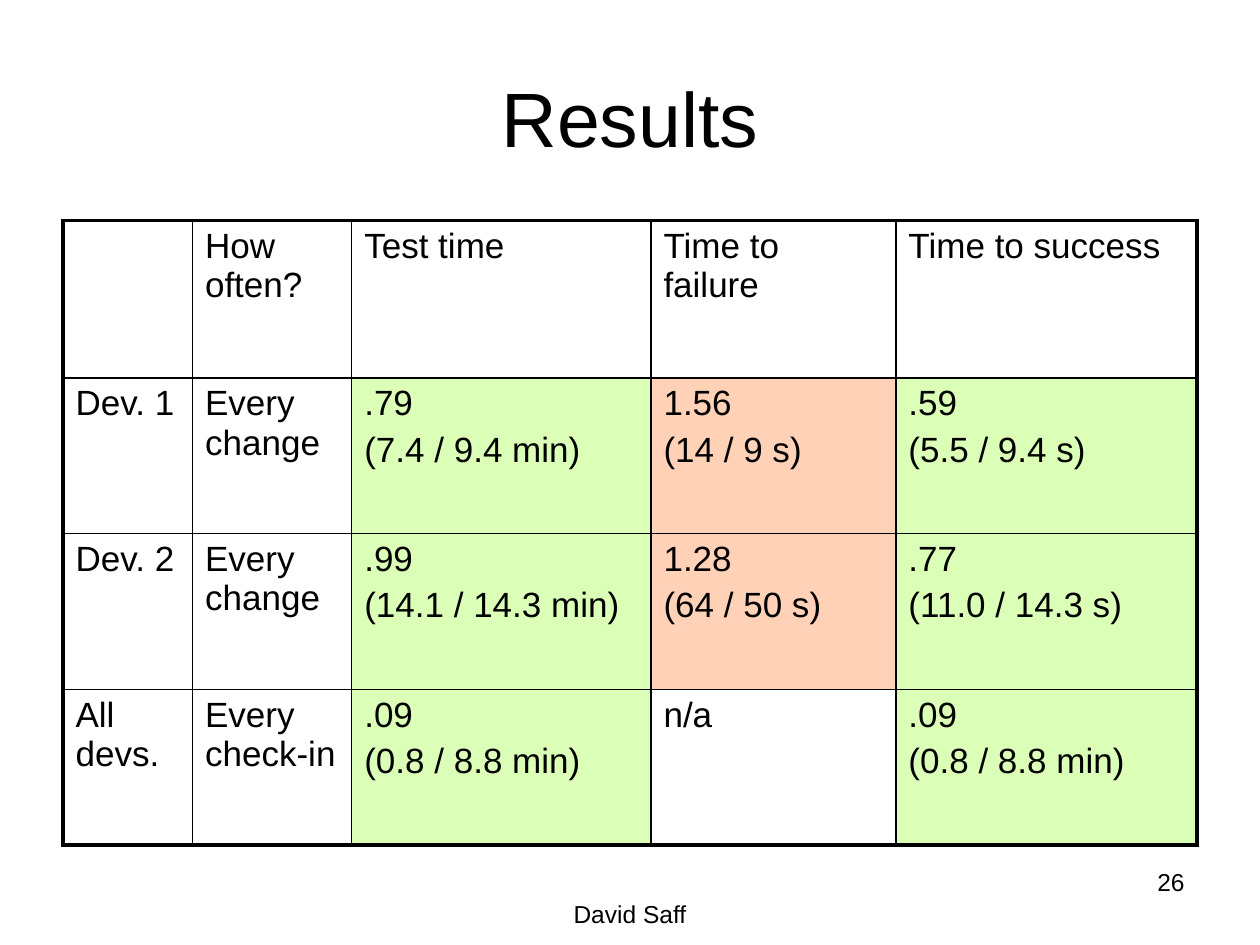
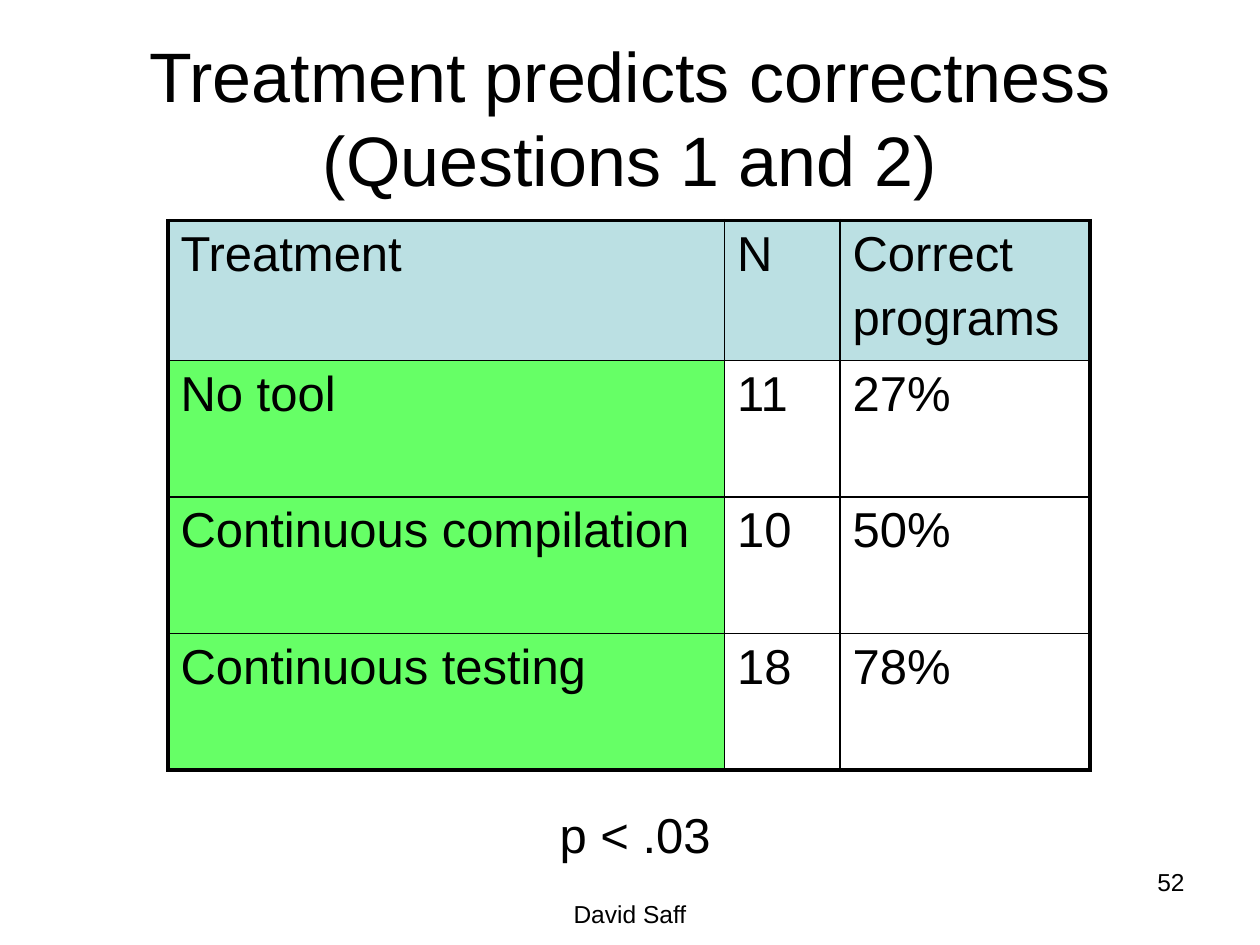
from dataclasses import dataclass

from lxml import etree
from pptx import Presentation
from pptx import util as u
from pptx.dml import color
from pptx.enum import text
from pptx.oxml import ns


@dataclass(frozen=True)
class Theme:
    font: str = "Arial"
    ink: str = "000000"
    better: str = "DBFFB7"
    worse: str = "FFD2B7"
    header: str = "BBE0E3"
    treatment: str = "66FF66"
    title_size: int = 44
    long_title_size: int = 40
    large_size: int = 28
    body_size: int = 20
    footer_size: int = 14
    outline: float = 2.25
    rule: float = 1
    paragraph_gap: float = 0.2  # share of the type size


class Deck:
    """Holds the theme, the presentation and the current slide."""

    def __init__(self, theme):
        self.theme = theme
        self.presentation = Presentation()
        self.presentation.slide_width = u.Pt(720)
        self.presentation.slide_height = u.Pt(540)
        self.slide = None

    def add_slide(self, title, number, title_size):
        blank_layout = self.presentation.slide_layouts[6]
        self.slide = self.presentation.slides.add_slide(blank_layout)
        footer_size = self.theme.footer_size
        self.add_text("David Saff", (246, 510, 228, 19), footer_size)
        self.add_text(str(number), (516, 492, 168, 37), footer_size,
                      align=text.PP_ALIGN.RIGHT)
        self.add_text(title, (36, 21.6, 648, 90), title_size,
                      anchor=text.MSO_ANCHOR.MIDDLE)

    def add_text(self, words, box, size, align=text.PP_ALIGN.CENTER,
                 anchor=text.MSO_ANCHOR.TOP):
        shape = self.slide.shapes.add_textbox(*map(u.Pt, box))
        text_frame = shape.text_frame
        text_frame.word_wrap = True
        text_frame.vertical_anchor = anchor
        self.set_text(text_frame, words, size, align)

    def set_text(self, text_frame, words, size, align):
        text_frame.text = words
        for index, paragraph in enumerate(text_frame.paragraphs):
            paragraph.alignment = align
            if index:
                paragraph.space_before = u.Pt(size * self.theme.paragraph_gap)
            for run in paragraph.runs:
                run.font.name = self.theme.font
                run.font.size = u.Pt(size)
                run.font.color.rgb = color.RGBColor.from_string(self.theme.ink)

    def add_table(self, rows, fills, left, top, widths, heights, size):
        frame = self.slide.shapes.add_table(
            len(rows), len(widths), u.Pt(left), u.Pt(top),
            u.Pt(sum(widths)), u.Pt(sum(heights)))
        table = frame.table
        table.first_row = table.horz_banding = False
        for column, width in zip(table.columns, widths):
            column.width = u.Pt(width)
        for row, height in zip(table.rows, heights):
            row.height = u.Pt(height)

        last_row, last_column = len(rows) - 1, len(widths) - 1
        for r, (row_words, row_fills) in enumerate(zip(rows, fills)):
            for c, (words, fill) in enumerate(zip(row_words, row_fills)):
                cell = table.cell(r, c)
                self.set_text(cell.text_frame, words, size, text.PP_ALIGN.LEFT)
                self.add_borders(cell, {"lnL": c == 0, "lnR": c == last_column,
                                        "lnT": r == 0, "lnB": r == last_row})
                if fill:
                    cell.fill.solid()
                    cell.fill.fore_color.rgb = color.RGBColor.from_string(fill)
                else:
                    cell.fill.background()

    def add_borders(self, cell, outer_sides):
        properties = cell._tc.get_or_add_tcPr()
        for side, is_outer in outer_sides.items():
            width = self.theme.outline if is_outer else self.theme.rule
            line = etree.SubElement(properties, ns.qn(f"a:{side}"),
                                    w=str(int(u.Pt(width))))
            solid = etree.SubElement(line, ns.qn("a:solidFill"))
            etree.SubElement(solid, ns.qn("a:srgbClr"), val=self.theme.ink)


def add_results(deck):
    theme = deck.theme
    deck.add_slide("Results", 26, theme.title_size)
    rows = [
        ("", "How often?", "Test time", "Time to failure", "Time to success"),
        ("Dev. 1", "Every change", ".79\n(7.4 / 9.4 min)",
         "1.56\n(14 / 9 s)", ".59\n(5.5 / 9.4 s)"),
        ("Dev. 2", "Every change", ".99\n(14.1 / 14.3 min)",
         "1.28\n(64 / 50 s)", ".77\n(11.0 / 14.3 s)"),
        ("All devs.", "Every check-in", ".09\n(0.8 / 8.8 min)",
         "n/a", ".09\n(0.8 / 8.8 min)"),
    ]
    developer = (None, None, theme.better, theme.worse, theme.better)
    everyone = (None, None, theme.better, None, theme.better)
    fills = [(None,) * 5, developer, developer, everyone]
    deck.add_table(rows, fills, 36, 126, widths=(74, 91, 171, 140, 172),
                   heights=(90, 89, 89, 89), size=theme.body_size)


def add_treatment(deck):
    theme = deck.theme
    deck.add_slide("Treatment predicts correctness (Questions 1 and 2)", 52,
                   theme.long_title_size)
    rows = [
        ("Treatment", "N", "Correct\nprograms"),
        ("No tool", "11", "27%"),
        ("Continuous compilation", "10", "50%"),
        ("Continuous testing", "18", "78%"),
    ]
    fills = [(theme.header,) * 3] + [(theme.treatment, None, None)] * 3
    deck.add_table(rows, fills, 96, 126, widths=(318, 66, 143),
                   heights=(78,) * 4, size=theme.large_size)
    # Significance below the table
    deck.add_text("p < .03", (36, 456, 654, 41), theme.large_size)


def main():
    deck = Deck(Theme())
    add_results(deck)
    add_treatment(deck)
    deck.presentation.save("out.pptx")


if __name__ == "__main__":
    main()
